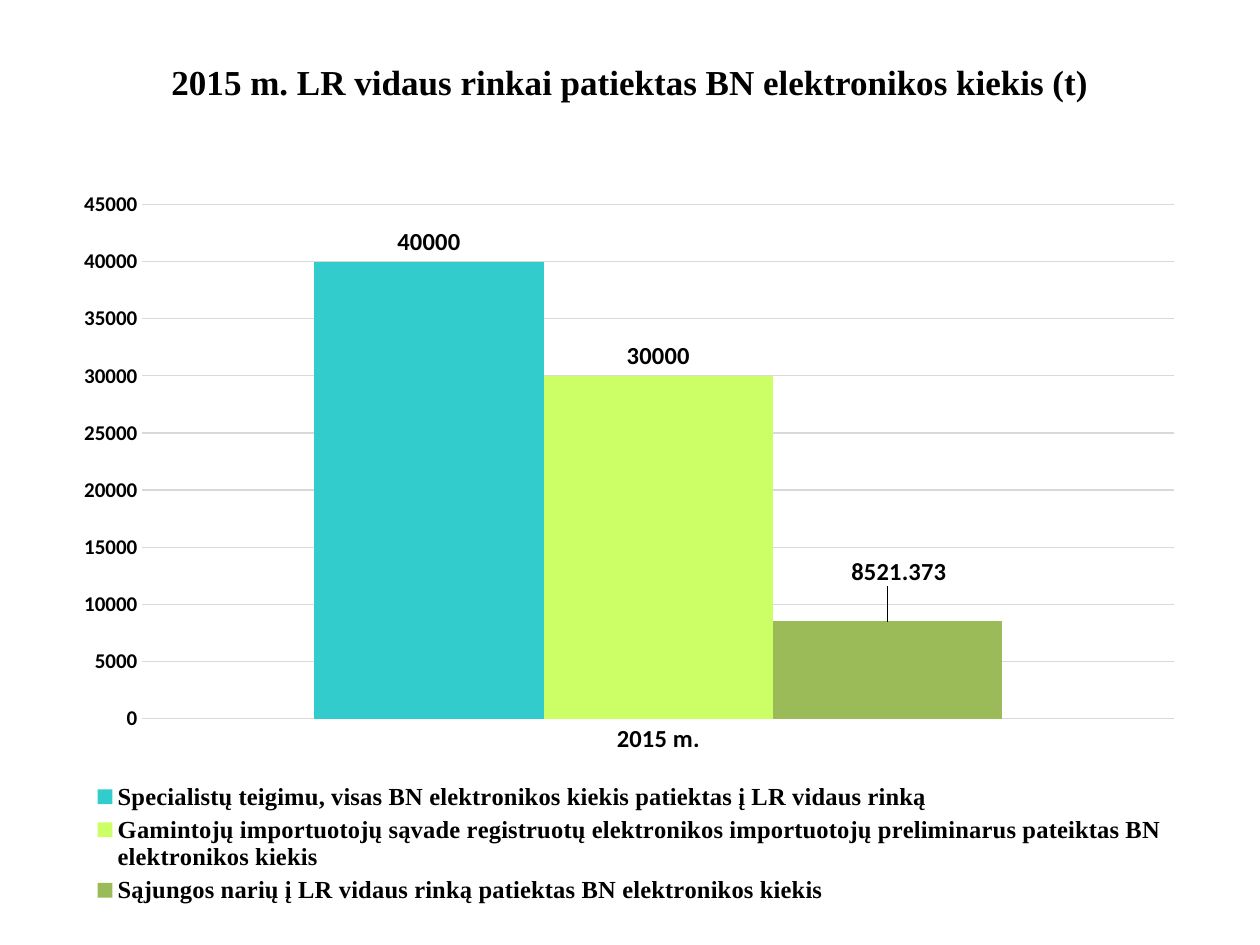
from lxml.etree import SubElement
from pptx import Presentation
from pptx.chart.data import CategoryChartData
from pptx.dml.color import RGBColor
from pptx.enum.chart import XL_CHART_TYPE as ChartType
from pptx.enum.chart import XL_LABEL_POSITION as LabelPosition
from pptx.enum.chart import XL_LEGEND_POSITION as LegendPosition
from pptx.enum.chart import XL_TICK_MARK as TickMark
from pptx.enum.text import MSO_ANCHOR, PP_ALIGN
from pptx.oxml.ns import qn
from pptx.util import Cm, Pt

# Content
TITLE = "2015 m. LR vidaus rinkai patiektas BN elektronikos kiekis (t)"
CATEGORIES = ["2015 m."]
SERIES = [
    ("Specialistų teigimu, visas BN elektronikos kiekis patiektas į LR vidaus rinką",
     40000, "33CCCC"),
    ("Gamintojų importuotojų sąvade registruotų elektronikos importuotojų "
     "preliminarus pateiktas BN elektronikos kiekis", 30000, "CCFF66"),
    ("Sąjungos narių į LR vidaus rinką patiektas BN elektronikos kiekis",
     8521.373, "9BBB59"),
]
SERIF, SANS = "Times New Roman", "Calibri"


def color(value):
    return RGBColor.from_string(value)


def style(font, size, name=SANS, bold=True):
    font.name, font.size, font.bold = name, Pt(size), bold
    font.color.rgb = color("000000")


def set_layout(parent, index, **values):
    """Place a chart part by fractions of the chart area."""
    for old in parent.findall(qn("c:layout")):
        parent.remove(old)
    layout = SubElement(parent, qn("c:layout"))
    manual = SubElement(layout, qn("c:manualLayout"))
    for tag, value in values.items():
        SubElement(manual, qn("c:" + tag)).set("val", str(value))
    parent.insert(index, layout)


deck = Presentation()
deck.slide_width, deck.slide_height = Cm(25.4), Cm(19.05)
page = deck.slides.add_slide(deck.slide_layouts[5])

# Title
title = page.shapes.title
title.left, title.top, title.width, title.height = Cm(1.27), Cm(0.76), Cm(22.86), Cm(1.75)
title.text_frame.vertical_anchor = MSO_ANCHOR.MIDDLE
para = title.text_frame.paragraphs[0]
para.alignment = PP_ALIGN.CENTER
span = para.add_run()
span.text = TITLE
style(span.font, 20, SERIF)

# Chart
data = CategoryChartData()
data.categories = CATEGORIES
for name, value, _ in SERIES:
    data.add_series(name, [value])
chart = page.shapes.add_chart(ChartType.COLUMN_CLUSTERED, Cm(1.27), Cm(3.53),
                              Cm(22.86), Cm(14.81), data).chart
chart.has_title = False
style(chart.font, 10, bold=False)
plot = chart.plots[0]
plot.gap_width, plot.overlap, plot.vary_by_categories = 150, 0, False
set_layout(chart._chartSpace.chart.plotArea, 0, layoutTarget="inner",
           xMode="edge", yMode="edge", x=0.07, y=0.04, w=0.91, h=0.7)

# Columns and their labels
for series, (_, _, fill) in zip(plot.series, SERIES):
    series.format.fill.solid()
    series.format.fill.fore_color.rgb = color(fill)
    labels = series.data_labels
    labels.show_value = True
    labels.position = LabelPosition.OUTSIDE_END
    style(labels.font, 14)

# The last label sits a little above its column
last = plot.series[len(SERIES) - 1]
label = last.points[0].data_label
style(label.font, 14)
label.position = LabelPosition.OUTSIDE_END
set_layout(last.data_labels._element.find(qn("c:dLbl")), 1, x=0.01, y=-0.04)

# Axes
for axis, size in ((chart.category_axis, 14), (chart.value_axis, 12)):
    axis.major_tick_mark = axis.minor_tick_mark = TickMark.NONE
    axis.format.line.fill.background()
    style(axis.tick_labels.font, size)
scale = chart.value_axis
scale.minimum_scale, scale.maximum_scale, scale.major_unit = 0, 45000, 5000
scale.has_major_gridlines = True
grid = scale.major_gridlines.format.line
grid.color.rgb, grid.width = color("D9D9D9"), Pt(0.75)

# Legend
chart.has_legend = True
legend = chart.legend
legend.position = LegendPosition.BOTTOM
legend.include_in_layout = False
style(legend.font, 14, SERIF)
set_layout(legend._element, 1, xMode="edge", yMode="edge", x=0.02, y=0.82, w=0.96, h=0.18)

deck.save("out.pptx")
